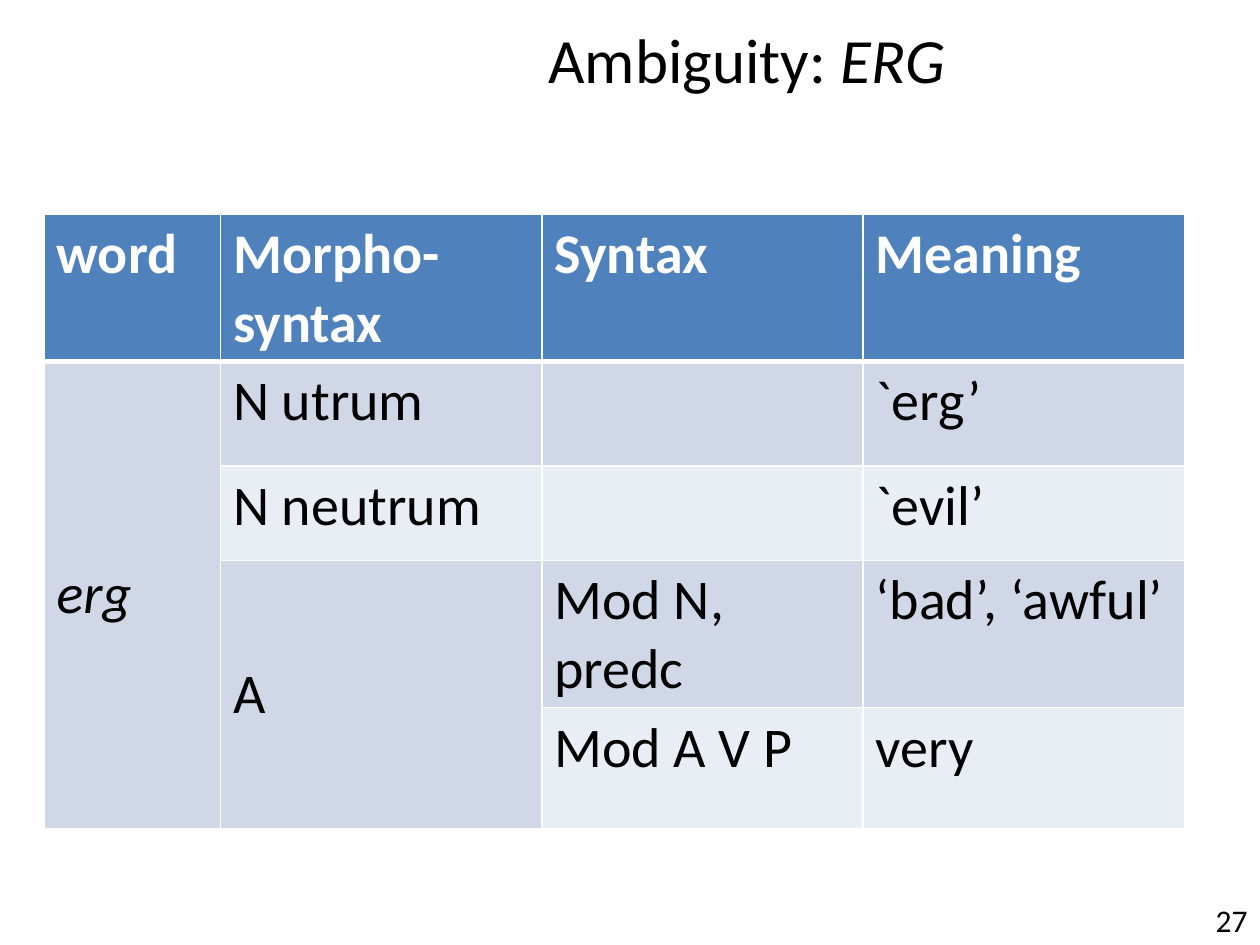
import pptx
import pptx.util
import pptx.dml.color
import pptx.enum.text
import pptx.oxml.ns
from dataclasses import dataclass
from lxml import etree

ALIGN = pptx.enum.text.PP_ALIGN
ANCHOR = pptx.enum.text.MSO_ANCHOR
WIDTH, HEIGHT = 10, 7.5


@dataclass(frozen=True)
class Theme:
    font: str = "Calibri"
    title_size: int = 36
    table_size: int = 32
    number_size: int = 18
    ink: str = "000000"
    paper: str = "FFFFFF"
    header: str = "4F81BD"
    bands: tuple = ("D0D8E8", "E9EDF4")
    rule: float = 1
    header_rule: float = 3


THEME = Theme()

COLUMNS = [1.4, 2.55, 2.55, 2.55]
ROWS = [0.75, 0.83, 0.75, 0.96, 0.96]
HEADINGS = ["word", "Morpho-\nsyntax", "Syntax", "Meaning"]
READINGS = [
    ["erg", "N utrum", "", "`erg’"],
    ["", "N neutrum", "", "`evil’"],
    ["", "A", "Mod N, predc", "‘bad’, ‘awful’"],
    ["", "", "Mod A V P", "very"],
]
# First row, column and last row of each vertical merge
MERGES = [(1, 0, 4), (3, 1, 4)]


def rgb(code):
    return pptx.dml.color.RGBColor.from_string(code)


def write(frame, text, *, size, color=THEME.ink, bold=False, italic=False,
          italic_tail="", align=ALIGN.LEFT):
    """Fill a text frame, one paragraph a line; italic_tail ends the last one."""
    frame.word_wrap = True
    for index, line in enumerate(text.split("\n")):
        paragraph = frame.add_paragraph() if index else frame.paragraphs[0]
        paragraph.alignment = align
        paragraph.font.size = pptx.util.Pt(size)
        pieces = [(line, italic)]
        if italic_tail and index == text.count("\n"):
            pieces.append((italic_tail, True))
        for piece, slanted in pieces:
            run = paragraph.add_run()
            run.text = piece
            run.font.name = THEME.font
            run.font.size = pptx.util.Pt(size)
            run.font.bold = bold
            run.font.italic = slanted
            run.font.color.rgb = rgb(color)


def add_label(slide, box, text, *, anchor=ANCHOR.TOP, **text_format):
    frame = slide.shapes.add_textbox(*map(pptx.util.Inches, box)).text_frame
    frame.vertical_anchor = anchor
    write(frame, text, **text_format)


def add_title(slide, box):
    add_label(slide, box, "Ambiguity: ", italic_tail="ERG", anchor=ANCHOR.MIDDLE,
              size=THEME.title_size, align=ALIGN.CENTER)


def add_page_number(slide, box):
    add_label(slide, box, "27", size=THEME.number_size, align=ALIGN.RIGHT)


def rule_cell(cell, widths):
    """Draw the cell's edges; widths are in points, by side."""
    properties = cell._tc.get_or_add_tcPr()
    qn = pptx.oxml.ns.qn
    for side, width in widths.items():
        edge = etree.SubElement(properties, qn(f"a:ln{side}"),
                                w=str(int(pptx.util.Pt(width))))
        fill = etree.SubElement(edge, qn("a:solidFill"))
        etree.SubElement(fill, qn("a:srgbClr"), val=THEME.paper)


def add_readings_table(slide, box):
    table = slide.shapes.add_table(len(ROWS), len(COLUMNS),
                                   *map(pptx.util.Inches, box)).table
    for column, width in zip(table.columns, COLUMNS):
        column.width = pptx.util.Inches(width)
    for row, height in zip(table.rows, ROWS):
        row.height = pptx.util.Inches(height)

    # Header and banded body
    for r, texts in enumerate([HEADINGS, *READINGS]):
        is_header = r == 0
        for c, text in enumerate(texts):
            cell = table.cell(r, c)
            rule_cell(cell, {
                "L": THEME.rule, "R": THEME.rule,
                "T": THEME.header_rule if r == 1 else THEME.rule,
                "B": THEME.header_rule if is_header else THEME.rule})
            cell.fill.solid()
            cell.fill.fore_color.rgb = rgb(
                THEME.header if is_header else THEME.bands[(r - 1) % 2])
            if text:
                write(cell.text_frame, text, size=THEME.table_size,
                      color=THEME.paper if is_header else THEME.ink,
                      bold=is_header, italic=not is_header and c == 0)

    # Cells shared by several readings
    for first, c, last in MERGES:
        shared = table.cell(first, c)
        shared.merge(table.cell(last, c))
        shared.vertical_anchor = ANCHOR.MIDDLE


def main():
    deck = pptx.Presentation()
    deck.slide_width = pptx.util.Inches(WIDTH)
    deck.slide_height = pptx.util.Inches(HEIGHT)
    slide = deck.slides.add_slide(deck.slide_layouts[6])

    title_left, number_width, number_height = 1.85, 1.06, 0.4
    add_title(slide, (title_left, 0, WIDTH - title_left, 0.92))
    add_page_number(slide, (WIDTH - number_width, HEIGHT - number_height,
                            number_width, number_height))
    add_readings_table(slide, (0.35, 1.7, sum(COLUMNS), sum(ROWS)))
    deck.save("out.pptx")


if __name__ == "__main__":
    main()
